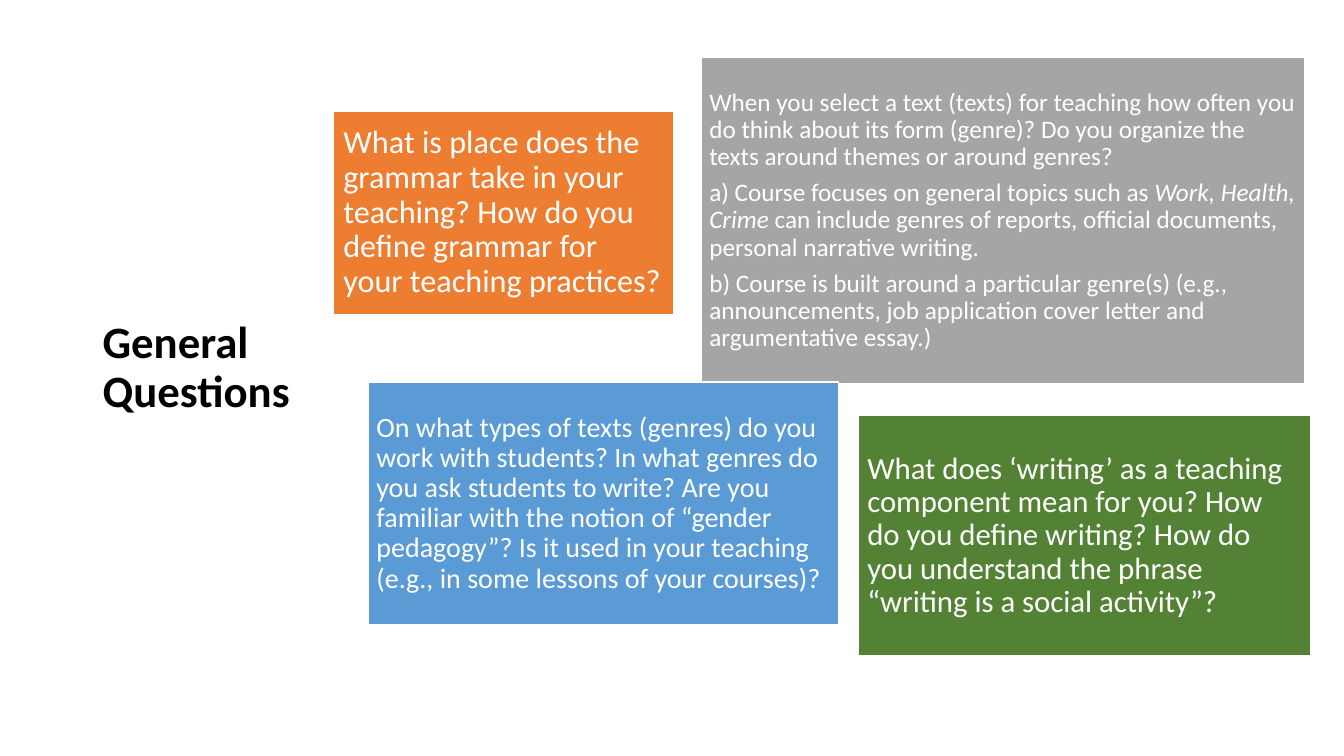
from dataclasses import dataclass

from pptx import Presentation
from pptx import util as u
from pptx.dml.color import RGBColor
from pptx.enum import shapes, text


@dataclass(frozen=True)
class Theme:
    font: str = "Calibri"
    ink: str = "000000"
    white: str = "FFFFFF"
    orange: str = "ED7D31"
    gray: str = "A5A5A5"
    green: str = "548235"
    blue: str = "5B9BD5"
    title_size: int = 32
    grammar_size: int = 23
    writing_size: int = 22
    genres_size: int = 20
    selection_size: int = 18


T = Theme()

# Each card: box, fill, text size, paragraphs as lists of (text, italic) runs.
CARDS = [
    ((3.31, 1.1, 3.37, 2.02), T.orange, T.grammar_size, [
        [("What is place does the grammar take in your teaching? How do you "
          "define grammar for your teaching practices?", False)],
    ]),
    ((6.96, 0.57, 5.98, 3.24), T.gray, T.selection_size, [
        [("When you select a text (texts) for teaching how often you do think "
          "about its form (genre)? Do you organize the texts around themes or "
          "around genres?", False)],
        [("a) Course focuses on general topics such as ", False),
         ("Work, Health, Crime", True),
         (" can include genres of reports, official documents, personal "
          "narrative writing.", False)],
        [("b) Course is built around a particular genre(s) (e.g., "
          "announcements, job application cover letter and argumentative "
          "essay.)", False)],
    ]),
    ((8.51, 4.12, 4.49, 2.39), T.green, T.writing_size, [
        [("What does ‘writing’ as a teaching component mean for you? How do "
          "you define writing? How do you understand the phrase “writing is a "
          "social activity”?", False)],
    ]),
    ((3.65, 3.79, 4.67, 2.41), T.blue, T.genres_size, [
        [("On what types of texts (genres) do you work with students? In what "
          "genres do you ask students to write? Are you familiar with the "
          "notion of “gender pedagogy”? Is it used in your teaching (e.g., in "
          "some lessons of your courses)?", False)],
    ]),
]


def style_paragraph(p, size, color):
    p.alignment = text.PP_ALIGN.LEFT
    p.line_spacing = 0.9
    p.font.name = T.font
    p.font.size = u.Pt(size)
    p.font.color.rgb = RGBColor.from_string(color)


def add_title(slide, box):
    tf = slide.shapes.add_textbox(*map(u.Inches, box)).text_frame
    tf.word_wrap = True
    tf.vertical_anchor = text.MSO_ANCHOR.MIDDLE
    p = tf.paragraphs[0]
    p.add_run().text = "General"
    p.add_line_break()
    p.add_run().text = "Questions"
    style_paragraph(p, T.title_size, T.ink)
    p.font.bold = True


def add_card(slide, box, fill, size, paragraphs):
    """Draw a filled card; margins and paragraph gaps scale with text size."""
    sp = slide.shapes.add_shape(shapes.MSO_SHAPE.RECTANGLE, *map(u.Inches, box))
    sp.shadow.inherit = False
    sp.fill.solid()
    sp.fill.fore_color.rgb = RGBColor.from_string(fill)
    sp.line.color.rgb = RGBColor.from_string(T.white)
    sp.line.width = u.Pt(1)

    tf = sp.text_frame
    tf.word_wrap = True
    tf.vertical_anchor = text.MSO_ANCHOR.MIDDLE
    margin = u.Inches(0.3 * size / 72)
    tf.margin_left = tf.margin_top = tf.margin_right = tf.margin_bottom = margin
    for i, runs in enumerate(paragraphs):
        p = tf.add_paragraph() if i else tf.paragraphs[0]
        for words, italic in runs:
            r = p.add_run()
            r.text = words
            if italic:
                r.font.italic = True
        style_paragraph(p, size, T.white)
        p.space_after = u.Pt(0.35 * size)


def main():
    prs = Presentation()
    prs.slide_width, prs.slide_height = u.Inches(13.33), u.Inches(7.5)
    slide = prs.slides.add_slide(prs.slide_layouts[6])
    add_title(slide, (0.92, 0.61, 2.4, 6.09))
    for card in CARDS:
        add_card(slide, *card)
    prs.save("out.pptx")


if __name__ == "__main__":
    main()
